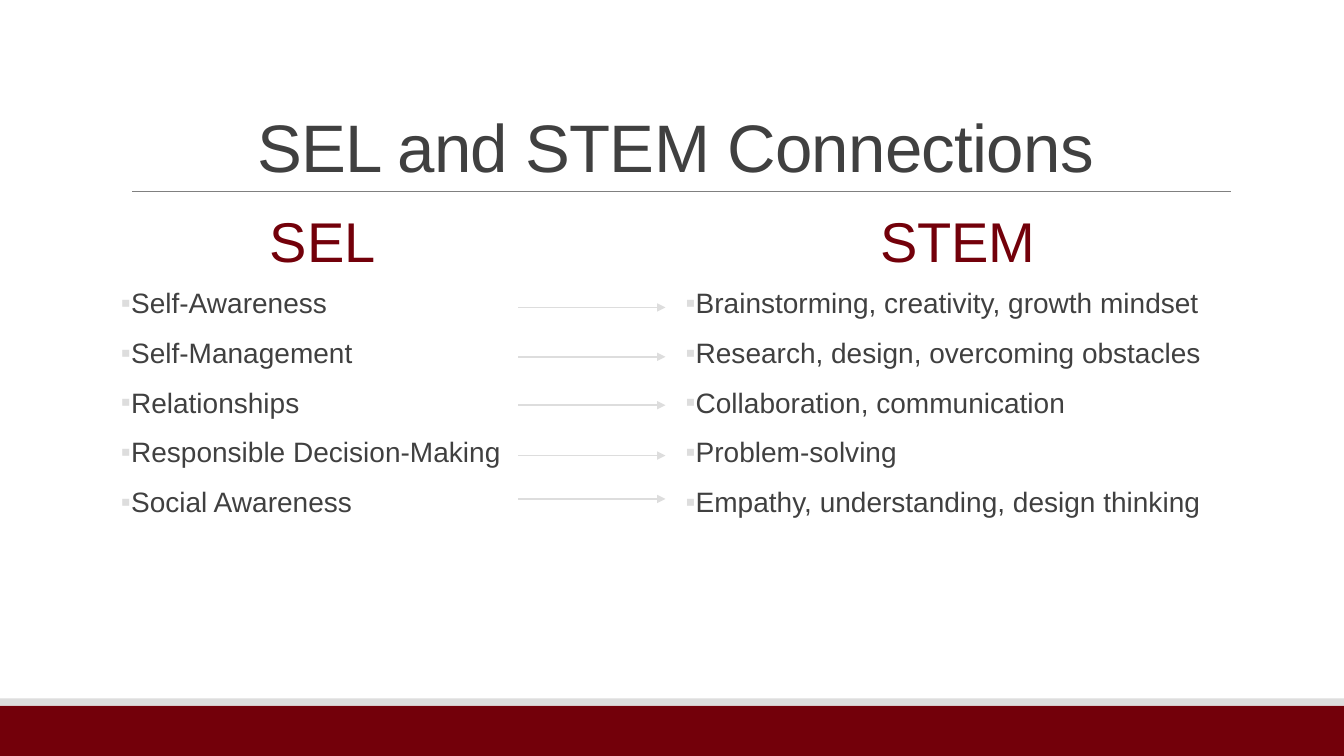
"""Build the slide that pairs SEL skills with STEM practices."""
from dataclasses import dataclass

import pptx
import pptx.dml.color
import pptx.enum.shapes
import pptx.enum.text
import pptx.oxml.ns
import pptx.oxml.xmlchemy
import pptx.slide
import pptx.text.text
import pptx.util
from lxml import etree

Inches = pptx.util.Inches
Pt = pptx.util.Pt
RGBColor = pptx.dml.color.RGBColor
Align = pptx.enum.text.PP_ALIGN
Anchor = pptx.enum.text.MSO_ANCHOR
qn = pptx.oxml.ns.qn


@dataclass(frozen=True)
class Theme:
    font: str = "Arial"
    garnet: RGBColor = RGBColor(0x73, 0x00, 0x0A)
    silver: RGBColor = RGBColor(0xDD, 0xDD, 0xDD)
    rule: RGBColor = RGBColor(0x80, 0x80, 0x80)
    ink: RGBColor = RGBColor(0x40, 0x40, 0x40)
    title_size: int = 48
    heading_size: int = 40
    body_size: int = 20


@dataclass(frozen=True)
class Box:
    left: float
    top: float
    width: float
    height: float

    def lengths(self) -> tuple[int, ...]:
        return tuple(Inches(v) for v in (self.left, self.top, self.width, self.height))


@dataclass(frozen=True)
class Connection:
    skill: str
    practice: str
    arrow_y: float


@dataclass(frozen=True)
class Column:
    heading: str
    heading_box: Box
    items: list[str]
    items_box: Box


THEME = Theme()
SLIDE_WIDTH, SLIDE_HEIGHT = 13.33, 7.5
CONNECTIONS = [
    Connection("Self-Awareness", "Brainstorming, creativity, growth mindset", 3.05),
    Connection("Self-Management", "Research, design, overcoming obstacles", 3.54),
    Connection("Relationships", "Collaboration, communication", 4.02),
    Connection("Responsible Decision-Making", "Problem-solving", 4.52),
    Connection("Social Awareness", "Empathy, understanding, design thinking", 4.95),
]
COLUMNS = [
    Column("SEL", Box(1.2, 2.02, 4, 0.81),
           [c.skill for c in CONNECTIONS], Box(1.2, 2.82, 4.32, 3.69)),
    Column("STEM", Box(6.8, 2.02, 5.4, 0.81),
           [c.practice for c in CONNECTIONS], Box(6.8, 2.82, 5.4, 3.69)),
]


def add_band(slide: pptx.slide.Slide, box: Box, color: RGBColor) -> None:
    band = slide.shapes.add_shape(pptx.enum.shapes.MSO_SHAPE.RECTANGLE, *box.lengths())
    band.shadow.inherit = False
    band.fill.solid()
    band.fill.fore_color.rgb = color
    band.line.fill.background()


def add_rule(slide: pptx.slide.Slide, start: float, end: float, y: float,
             color: RGBColor, weight: float, arrow: bool = False) -> None:
    rule = slide.shapes.add_connector(
        pptx.enum.shapes.MSO_CONNECTOR.STRAIGHT,
        Inches(start), Inches(y), Inches(end), Inches(y))
    rule.line.color.rgb = color
    rule.line.width = Pt(weight)
    if arrow:
        etree.SubElement(rule.line._get_or_add_ln(), qn("a:tailEnd"), type="triangle")
    etree.SubElement(rule._element.spPr, qn("a:effectLst"))


def add_frame(slide: pptx.slide.Slide, box: Box, anchor: Anchor) -> pptx.text.text.TextFrame:
    frame = slide.shapes.add_textbox(*box.lengths()).text_frame
    frame.word_wrap = True
    frame.vertical_anchor = anchor
    return frame


def style(paragraph: pptx.text.text._Paragraph, size: int, color: RGBColor,
          align: Align, spacing: float) -> None:
    paragraph.alignment = align
    paragraph.line_spacing = spacing
    paragraph.font.name = THEME.font
    paragraph.font.size = Pt(size)
    paragraph.font.color.rgb = color


def add_bullet(paragraph: pptx.text.text._Paragraph) -> None:
    properties = paragraph._p.get_or_add_pPr()
    properties.set("marL", str(Inches(0.1)))
    properties.set("indent", str(-Inches(0.1)))
    bullet_color = etree.SubElement(properties, qn("a:buClr"))
    etree.SubElement(bullet_color, qn("a:srgbClr"), val=str(THEME.silver))
    etree.SubElement(properties, qn("a:buFont"), typeface=THEME.font)
    etree.SubElement(properties, qn("a:buChar"), char="▪")


def add_title(slide: pptx.slide.Slide, text: str) -> None:
    title = add_frame(slide, Box(1.2, 0.31, 11, 1.59), Anchor.BOTTOM).paragraphs[0]
    title.text = text
    style(title, THEME.title_size, THEME.ink, Align.CENTER, 0.85)
    title.runs[0]._r.get_or_add_rPr().set("spc", "-50")


def add_column(slide: pptx.slide.Slide, column: Column) -> None:
    heading = add_frame(slide, column.heading_box, Anchor.MIDDLE).paragraphs[0]
    heading.text = column.heading
    style(heading, THEME.heading_size, THEME.garnet, Align.CENTER, 0.9)

    items = add_frame(slide, column.items_box, Anchor.TOP)
    items.margin_left = items.margin_right = 0
    for index, text in enumerate(column.items):
        item = items.add_paragraph() if index else items.paragraphs[0]
        item.text = text
        add_bullet(item)
        style(item, THEME.body_size, THEME.ink, Align.LEFT, 0.9)
        item.space_before = Pt(12 if index else 0)
        item.space_after = Pt(2)


def main() -> None:
    deck = pptx.Presentation()
    deck.slide_width, deck.slide_height = Inches(SLIDE_WIDTH), Inches(SLIDE_HEIGHT)
    slide = deck.slides.add_slide(deck.slide_layouts[6])
    add_band(slide, Box(0, 7, SLIDE_WIDTH, 0.5), THEME.garnet)
    add_band(slide, Box(0, 6.93, SLIDE_WIDTH, 0.07), THEME.silver)
    add_rule(slide, 1.31, 12.21, 1.9, THEME.rule, 0.5)
    add_title(slide, "SEL and STEM Connections")
    for column in COLUMNS:
        add_column(slide, column)
    for connection in CONNECTIONS:
        add_rule(slide, 5.14, 6.6, connection.arrow_y, THEME.silver, 1, arrow=True)
    deck.save("out.pptx")


if __name__ == "__main__":
    main()
